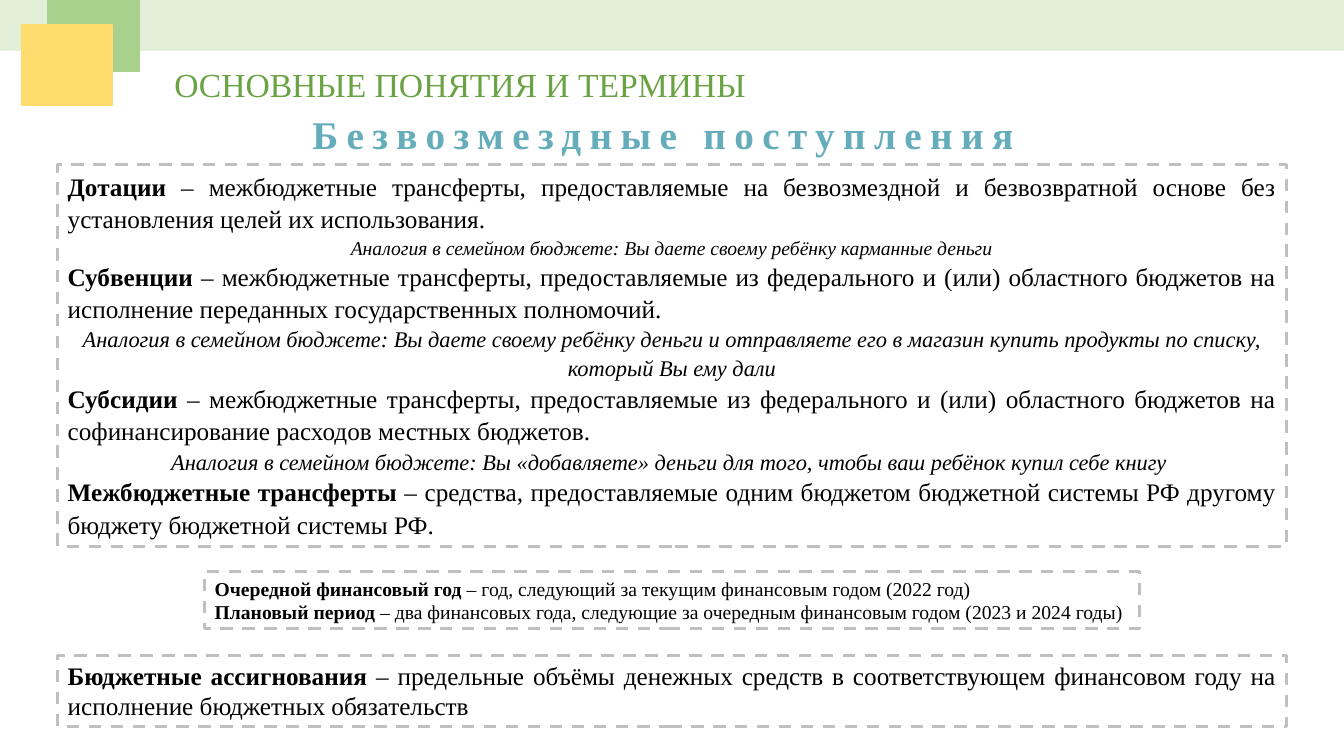
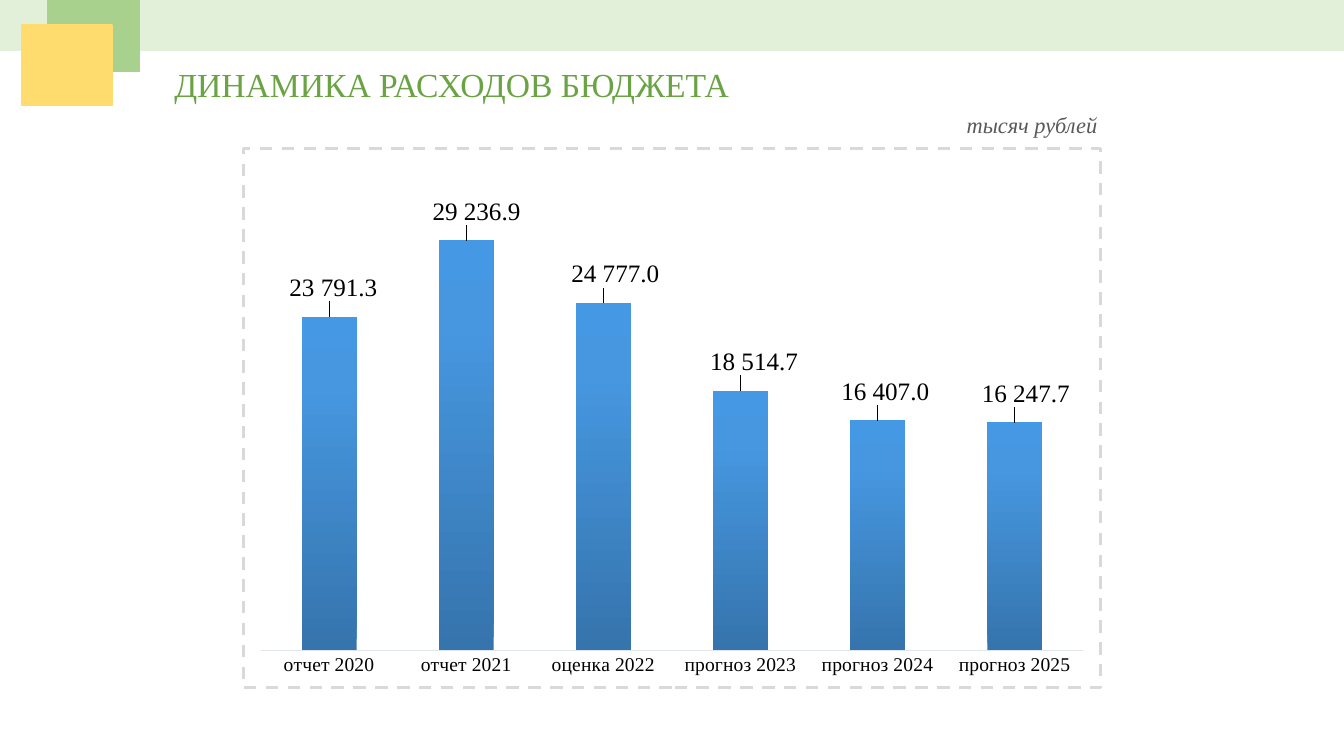
from copy import deepcopy
from dataclasses import dataclass
from typing import NamedTuple

from lxml import etree
from pptx import Presentation
from pptx.chart.chart import Chart
from pptx.chart.data import CategoryChartData
from pptx.dml.color import RGBColor
from pptx.enum.chart import XL_CHART_TYPE as ChartType
from pptx.enum.chart import XL_LABEL_POSITION as LabelPosition
from pptx.enum.chart import XL_TICK_MARK as TickMark
from pptx.enum.dml import MSO_LINE_DASH_STYLE as Dash
from pptx.enum.shapes import MSO_SHAPE as Preset
from pptx.enum.text import MSO_ANCHOR as Anchor
from pptx.enum.text import MSO_AUTO_SIZE as AutoSize
from pptx.enum.text import PP_ALIGN as Align
from pptx.oxml import parse_xml
from pptx.oxml.ns import nsdecls, qn
from pptx.slide import Slide
from pptx.util import Inches, Pt

WIDTH, HEIGHT = Inches(13.33), Inches(7.5)
SERIF = "Times New Roman"
BLACK, WHITE = "000000", "FFFFFF"
TITLE_GREEN, HEADING_BLUE, UNIT_GREY = "6AA343", "65ADBB", "595959"
FRAME_GREY, CHART_FRAME_GREY, AXIS_GREY = "BFBFBF", "D9D9D9", "E0E5EB"
NUMBER_FORMAT = r"#\ ##0.0"
BAR_GRADIENT = ((0, "3674AD"), (80, "4697E0"), (100, "4498E4"))


class Area(NamedTuple):
    """Place on the slide, in percent of its width and height."""
    left: float
    top: float
    width: float
    height: float

    def lengths(self) -> tuple[int, ...]:
        return tuple(int(share * side / 100) for share, side in zip(self, (WIDTH, HEIGHT) * 2))


@dataclass(frozen=True)
class Block:
    area: Area
    fill: str


@dataclass(frozen=True)
class Caption:
    area: Area
    text: str
    size: int
    color: str
    bold: bool = False
    italic: bool = False
    tracking: int = 0
    anchor: Anchor = Anchor.TOP


@dataclass(frozen=True)
class Entry:
    """Definition with a bold term, or an analogy when the term is empty."""
    term: str
    text: str
    size: int = 18


@dataclass(frozen=True)
class Frame:
    area: Area
    entries: tuple[Entry, ...]
    spacing: float = 1.0


class Expense(NamedTuple):
    year: str
    amount: float
    label_shift: float


def centred(top: float, width: float, height: float) -> Area:
    return Area((100 - width) / 2, top, width, height)


BANDS = (
    Block(Area(0, 0, 100, 6.67), "E2F0D9"),
    Block(Area(3.53, 0, 6.83, 9.47), "A9D18E"),
    Block(Area(1.58, 3.33, 6.75, 10.67), "FFDC6D"),
)
HEADING = Caption(Area(22.5, 13.87, 54.84, 7.6), "Безвозмездные поступления", 28, HEADING_BLUE,
                  bold=True, tracking=6, anchor=Anchor.MIDDLE)
UNIT = Caption(Area(71.19, 14, 11.4, 4.93), "тысяч рублей", 16, UNIT_GREY, italic=True)
CHART_AREA = centred(19.47, 64, 71.73)
FRAMES = (
    Frame(centred(21.73, 91.4, 50.53), (
        Entry("Дотации", " – межбюджетные трансферты, предоставляемые на безвозмездной и "
              "безвозвратной основе без установления целей их использования."),
        Entry("", "Аналогия в семейном бюджете: Вы даете своему ребёнку карманные деньги", 14),
        Entry("Субвенции", " – межбюджетные трансферты, предоставляемые из федерального и (или) "
              "областного бюджетов на исполнение переданных государственных полномочий."),
        Entry("", "Аналогия в семейном бюджете: Вы даете своему ребёнку деньги и отправляете "
              "его в магазин купить продукты по списку, который Вы ему дали", 16),
        Entry("Субсидии", " – межбюджетные трансферты, предоставляемые из федерального и (или) "
              "областного бюджетов на софинансирование расходов местных бюджетов."),
        Entry("", "Аналогия в семейном бюджете: Вы «добавляете» деньги для того, чтобы ваш "
              "ребёнок купил себе книгу ", 16),
        Entry("Межбюджетные трансферты", " – средства, предоставляемые одним бюджетом бюджетной "
              "системы РФ другому бюджету бюджетной системы РФ."),
    ), 1.07),
    Frame(centred(75.6, 69.54, 7.6), (
        Entry("Очередной финансовый год",
              " – год, следующий за текущим финансовым годом (2022 год)", 14),
        Entry("Плановый период", " – два финансовых года, следующие за очередным финансовым "
              "годом (2023 и 2024 годы)", 14),
    )),
    Frame(centred(86.67, 91.4, 9.47), (
        Entry("Бюджетные ассигнования", " – предельные объёмы денежных средств в "
              "соответствующем финансовом году на исполнение бюджетных обязательств"),
    )),
)
EXPENSES = (
    Expense("отчет 2020", 23791.3, 0.5),
    Expense("отчет 2021", 29236.9, 1.2),
    Expense("оценка 2022", 24777.0, 1.4),
    Expense("прогноз 2023", 18514.7, 1.6),
    Expense("прогноз 2024", 16407.0, 0.9),
    Expense("прогноз 2025", 16247.7, 1.3),
)


def rgb(color: str) -> RGBColor:
    return RGBColor.from_string(color)


def style_font(font, size: int, color: str, name: str = SERIF) -> None:
    font.name, font.size = name, Pt(size)
    font.color.rgb = rgb(color)


def draw_rectangle(slide: Slide, area: Area, fill: str, line: str, weight: float):
    rectangle = slide.shapes.add_shape(Preset.RECTANGLE, *area.lengths())
    rectangle.shadow.inherit = False
    rectangle.fill.solid()
    rectangle.fill.fore_color.rgb = rgb(fill)
    rectangle.line.color.rgb = rgb(line)
    rectangle.line.width = Pt(weight)
    return rectangle


def draw_caption(slide: Slide, caption: Caption) -> None:
    body = slide.shapes.add_textbox(*caption.area.lengths()).text_frame
    body.word_wrap = False
    body.auto_size = AutoSize.SHAPE_TO_FIT_TEXT
    body.vertical_anchor = caption.anchor
    line = body.paragraphs[0]
    style_font(line.font, caption.size, caption.color)
    line.font.bold, line.font.italic = caption.bold, caption.italic
    words = line.add_run()
    words.text = caption.text
    if caption.tracking:
        words._r.get_or_add_rPr().set("spc", str(caption.tracking * 100))


def draw_frame(slide: Slide, frame: Frame) -> None:
    box = draw_rectangle(slide, frame.area, WHITE, FRAME_GREY, 2.25)
    box.line.dash_style = Dash.DASH
    body = box.text_frame
    body.word_wrap = True
    body.auto_size = AutoSize.SHAPE_TO_FIT_TEXT
    body.vertical_anchor = Anchor.TOP
    for number, entry in enumerate(frame.entries):
        line = body.add_paragraph() if number else body.paragraphs[0]
        line.alignment = Align.JUSTIFY if entry.term else Align.CENTER
        line.line_spacing = frame.spacing
        style_font(line.font, entry.size, BLACK)
        line.font.italic = not entry.term
        if entry.term:
            term = line.add_run()
            term.text = entry.term
            term.font.bold = True
        line.add_run().text = entry.text


def start_slide(deck, title: str) -> Slide:
    slide = deck.slides.add_slide(deck.slide_layouts[6])
    for band in BANDS:
        draw_rectangle(slide, band.area, band.fill, band.fill, 1)
    draw_caption(slide, Caption(Area(12.23, 7.73, 44.48, 6.67), title, 24, TITLE_GREEN))
    return slide


def layout_xml(**shares: float):
    values = "".join(f'<c:{key} val="{value}"/>' for key, value in shares.items())
    return parse_xml(f'<c:layout {nsdecls("c")}><c:manualLayout>{values}'
                     "</c:manualLayout></c:layout>")


def frame_chart(chart: Chart) -> None:
    border = parse_xml(
        f'<c:spPr {nsdecls("c", "a")}><a:noFill/><a:ln w="{Pt(2.25)}"><a:solidFill>'
        f'<a:srgbClr val="{CHART_FRAME_GREY}"/></a:solidFill><a:prstDash val="dash"/></a:ln></c:spPr>')
    chart.element.find(qn("c:chart")).addnext(border)
    plot_area = chart.element.find(".//" + qn("c:plotArea"))
    for automatic in plot_area.findall(qn("c:layout")):
        plot_area.remove(automatic)
    layout = layout_xml(x=0.02, y=0.02, w=0.96, h=0.91)
    target = etree.Element(qn("c:layoutTarget"), val="inner")
    layout[0].insert(0, target)
    for offset, key in enumerate(("xMode", "yMode"), 1):
        layout[0].insert(offset, etree.Element(qn(f"c:{key}"), val="edge"))
    plot_area.insert(0, layout)


def shade_bars(chart: Chart) -> None:
    chart.plots[0].series[0].format.fill.gradient()
    stops = "".join(f'<a:gs pos="{share * 1000}"><a:srgbClr val="{color}"/></a:gs>'
                    for share, color in BAR_GRADIENT)
    gradient = chart.element.find(".//" + qn("a:gradFill"))
    gradient.getparent().replace(gradient, parse_xml(
        f'<a:gradFill {nsdecls("a")}><a:gsLst>{stops}</a:gsLst><a:lin ang="16200000"/></a:gradFill>'))


def label_bars(chart: Chart) -> None:
    labels = chart.plots[0].series[0].data_labels
    labels.show_value = True
    labels.number_format, labels.number_format_is_linked = NUMBER_FORMAT, False
    labels.position = LabelPosition.OUTSIDE_END
    style_font(labels.font, 18, BLACK)
    shared = chart.element.find(".//" + qn("c:dLbls"))
    settings = [deepcopy(child) for child in shared if child.tag != qn("c:showLeaderLines")]
    for number, expense in enumerate(EXPENSES):
        label = etree.Element(qn("c:dLbl"))
        etree.SubElement(label, qn("c:idx"), val=str(number))
        label.append(layout_xml(x=expense.label_shift / 100, y=-0.02))
        label.extend(deepcopy(settings))
        shared.insert(number, label)


def draw_chart(slide: Slide) -> None:
    data = CategoryChartData(number_format=NUMBER_FORMAT)
    data.categories = [expense.year for expense in EXPENSES]
    data.add_series("Расходы", [expense.amount for expense in EXPENSES])
    chart = slide.shapes.add_chart(ChartType.COLUMN_CLUSTERED, *CHART_AREA.lengths(), data).chart
    chart.has_legend = chart.has_title = False
    style_font(chart.font, 10, BLACK, "Calibri")
    chart.plots[0].gap_width = 150
    chart.plots[0].vary_by_categories = False
    amounts, years = chart.value_axis, chart.category_axis
    amounts.visible = amounts.has_major_gridlines = False
    amounts.minimum_scale, amounts.maximum_scale = 0, 35000
    years.major_tick_mark = TickMark.NONE
    years.format.line.color.rgb = rgb(AXIS_GREY)
    years.format.line.width = Pt(0.75)
    style_font(years.tick_labels.font, 14, BLACK)
    frame_chart(chart)
    shade_bars(chart)
    label_bars(chart)


def main() -> None:
    deck = Presentation()
    deck.slide_width, deck.slide_height = WIDTH, HEIGHT
    terms = start_slide(deck, "ОСНОВНЫЕ ПОНЯТИЯ И ТЕРМИНЫ")
    draw_caption(terms, HEADING)
    for frame in FRAMES:
        draw_frame(terms, frame)
    dynamics = start_slide(deck, "ДИНАМИКА РАСХОДОВ БЮДЖЕТА")
    draw_chart(dynamics)
    draw_caption(dynamics, UNIT)
    deck.save("out.pptx")


if __name__ == "__main__":
    main()
